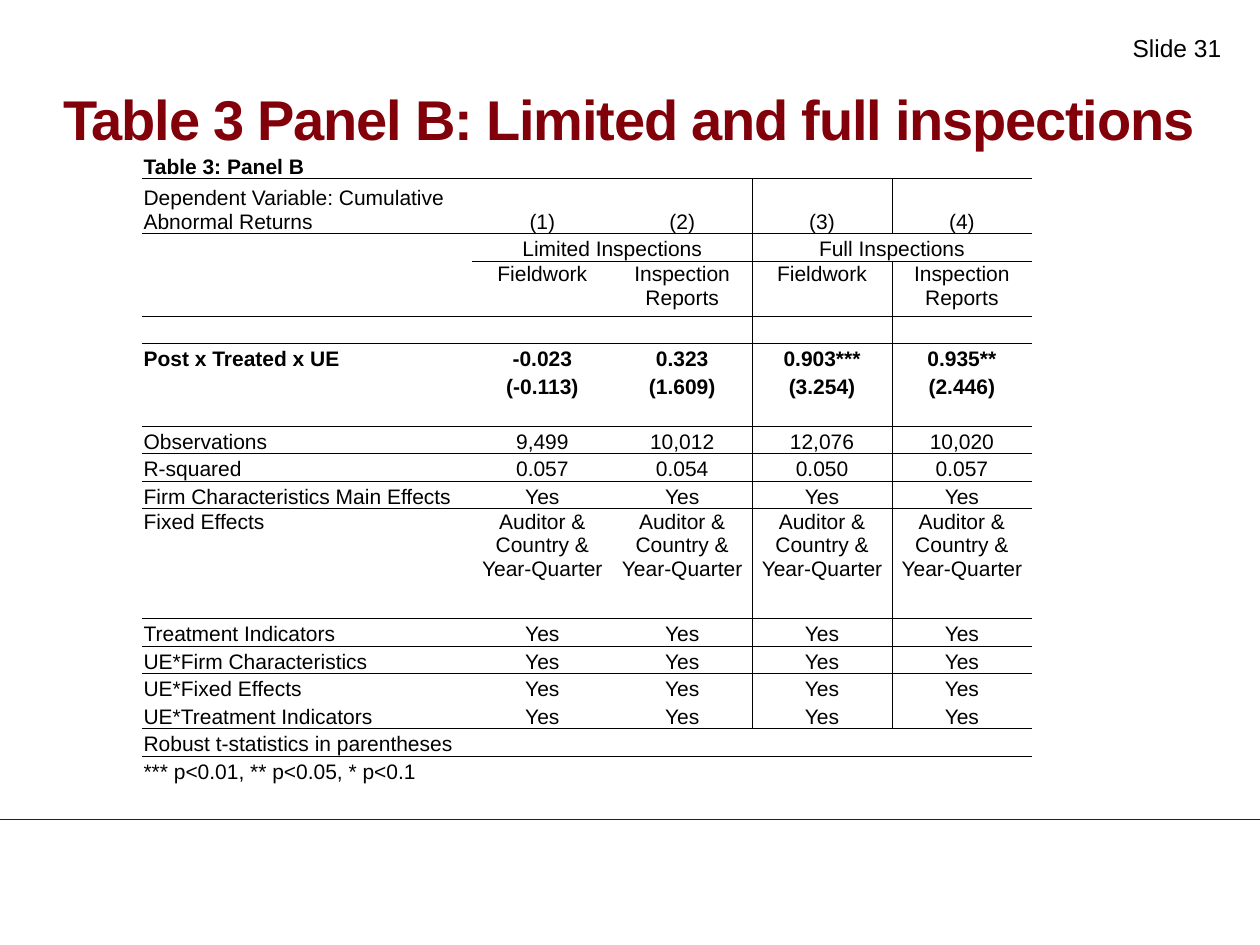
"""Build the slide with the regression table on limited and full inspections."""
from lxml.etree import SubElement
from pptx import Presentation
from pptx.dml.color import RGBColor
from pptx.enum.shapes import MSO_CONNECTOR
from pptx.enum.text import MSO_ANCHOR, PP_ALIGN
from pptx.oxml.ns import qn
from pptx.util import Inches, Pt

COLORS = {"title": "820009", "rule": "6E0000", "text": "000000"}
FONT = "Arial"
YES = ["Yes"] * 4
EFFECTS = ["Auditor & Country & Year-Quarter"] * 4
ROWS = [
    ["Table 3: Panel B"],
    ["Dependent Variable: Cumulative Abnormal Returns", "(1)", "(2)", "(3)", "(4)"],
    ["", "Limited Inspections", "", "Full Inspections"],
    ["", "Fieldwork", "Inspection Reports", "Fieldwork", "Inspection Reports"],
    [],
    ["Post x Treated x UE", "-0.023", "0.323", "0.903***", "0.935**"],
    ["", "(-0.113)", "(1.609)", "(3.254)", "(2.446)"],
    [],
    ["Observations", "9,499", "10,012", "12,076", "10,020"],
    ["R-squared", "0.057", "0.054", "0.050", "0.057"],
    ["Firm Characteristics Main Effects", *YES],
    ["Fixed Effects", *EFFECTS],
    ["Treatment Indicators", *YES],
    ["UE*Firm Characteristics", *YES],
    ["UE*Fixed Effects", *YES],
    ["UE*Treatment Indicators", *YES],
    ["Robust t-statistics in parentheses"],
    ["*** p<0.01, ** p<0.05, * p<0.1"],
]
HEADING_HEIGHT = 0.27
LINE_HEIGHT = (5.07 - HEADING_HEIGHT) / 22
LINES_IN_ROW = {1: 2, 3: 2, 11: 4}
RULED_ROWS = {0, 3, 7, 9, 11, 12, 15}
GROUP_ROW = 2
BOLD_ROWS = {0, 5, 6}
TOP_ROWS = {3, 11}
DIVIDED_ROWS = range(1, 16)


def style_run(run, size, color, bold=False):
    run.font.name = FONT
    run.font.size = Pt(size)
    run.font.bold = bold
    run.font.color.rgb = RGBColor.from_string(COLORS[color])


def add_border(cell, side, width):
    border = SubElement(cell._tc.get_or_add_tcPr(), qn(f"a:ln{side}"), w=str(Pt(width)))
    fill = SubElement(border, qn("a:solidFill"))
    SubElement(fill, qn("a:srgbClr"), val=COLORS["text"])


prs = Presentation()
prs.slide_width, prs.slide_height = Inches(10), Inches(7.5)
slide = prs.slides.add_slide(prs.slide_layouts[5])

footer_rule = slide.shapes.add_connector(
    MSO_CONNECTOR.STRAIGHT, Inches(0), Inches(6.5), Inches(10), Inches(6.5))
footer_rule.line.color.rgb = RGBColor.from_string(COLORS["rule"])
footer_rule.line.width = Pt(0.25)
SubElement(footer_rule._element.spPr, qn("a:effectLst"))

slide_number = slide.shapes.add_textbox(Inches(8.89), Inches(0.21), Inches(1.11), Inches(0.52))
slide_number.text_frame.word_wrap = True
slide_number.text_frame.text = "Slide 31"
style_run(slide_number.text_frame.paragraphs[0].runs[0], 14, "text")

title = slide.shapes.title
title.left, title.top, title.width, title.height = (
    Inches(0.5), Inches(0.29), Inches(9), Inches(0.92))
heading = title.text_frame
heading.margin_left = heading.margin_right = heading.margin_top = heading.margin_bottom = 0
heading.vertical_anchor = MSO_ANCHOR.BOTTOM
heading.text = "Table 3 Panel B: Limited and full inspections"
heading.paragraphs[0].alignment = PP_ALIGN.LEFT
heading.paragraphs[0].line_spacing = 0.9
heading_run = heading.paragraphs[0].runs[0]
style_run(heading_run, 32, "title", True)
heading_run.font._element.set("spc", "-70")

results_frame = slide.shapes.add_table(
    len(ROWS), 5, Inches(1.13), Inches(1.15), Inches(7.05), Inches(5.07))
results = results_frame.table
results.first_row = results.horz_banding = False
results._tbl.tblPr.find(qn("a:tableStyleId")).text = "{2D5ABB26-0587-4C30-8999-92F81FD0307C}"
for column, width in zip(results.columns, [2.62] + [1.11] * 4):
    column.width = Inches(width)

for r, values in enumerate(ROWS):
    row_height = LINES_IN_ROW.get(r, 1) * LINE_HEIGHT if r else HEADING_HEIGHT
    results.rows[r].height = Inches(row_height)
    for c in range(5):
        cell = results.cell(r, c)
        cell.margin_left = cell.margin_right = cell.margin_top = Inches(0.01)
        cell.margin_bottom = 0
        cell.vertical_anchor = MSO_ANCHOR.TOP if r in TOP_ROWS else MSO_ANCHOR.BOTTOM
        if c == 3 and r in DIVIDED_ROWS:
            add_border(cell, "L", 0.5)
        if c == 2 and r in DIVIDED_ROWS:
            add_border(cell, "R", 0.5)
        if r - 1 in RULED_ROWS:
            add_border(cell, "T", 0.5)
        if r - 1 == GROUP_ROW and c:
            add_border(cell, "T", 1)
        if r in RULED_ROWS:
            add_border(cell, "B", 0.5)
        if r == GROUP_ROW and c:
            add_border(cell, "B", 1)
        cell.fill.background()
        paragraph = cell.text_frame.paragraphs[0]
        paragraph.alignment = PP_ALIGN.CENTER if c else PP_ALIGN.LEFT
        if c < len(values) and values[c]:
            paragraph.text = values[c]
            style_run(paragraph.runs[0], 12, "text", r in BOLD_ROWS)
        else:
            SubElement(paragraph._p, qn("a:endParaRPr"), sz="1200")

for first in (1, 3):
    results.cell(GROUP_ROW, first).merge(results.cell(GROUP_ROW, first + 1))
for first in (1, 3):
    results.cell(GROUP_ROW, first).text_frame.word_wrap = True

prs.save("out.pptx")
